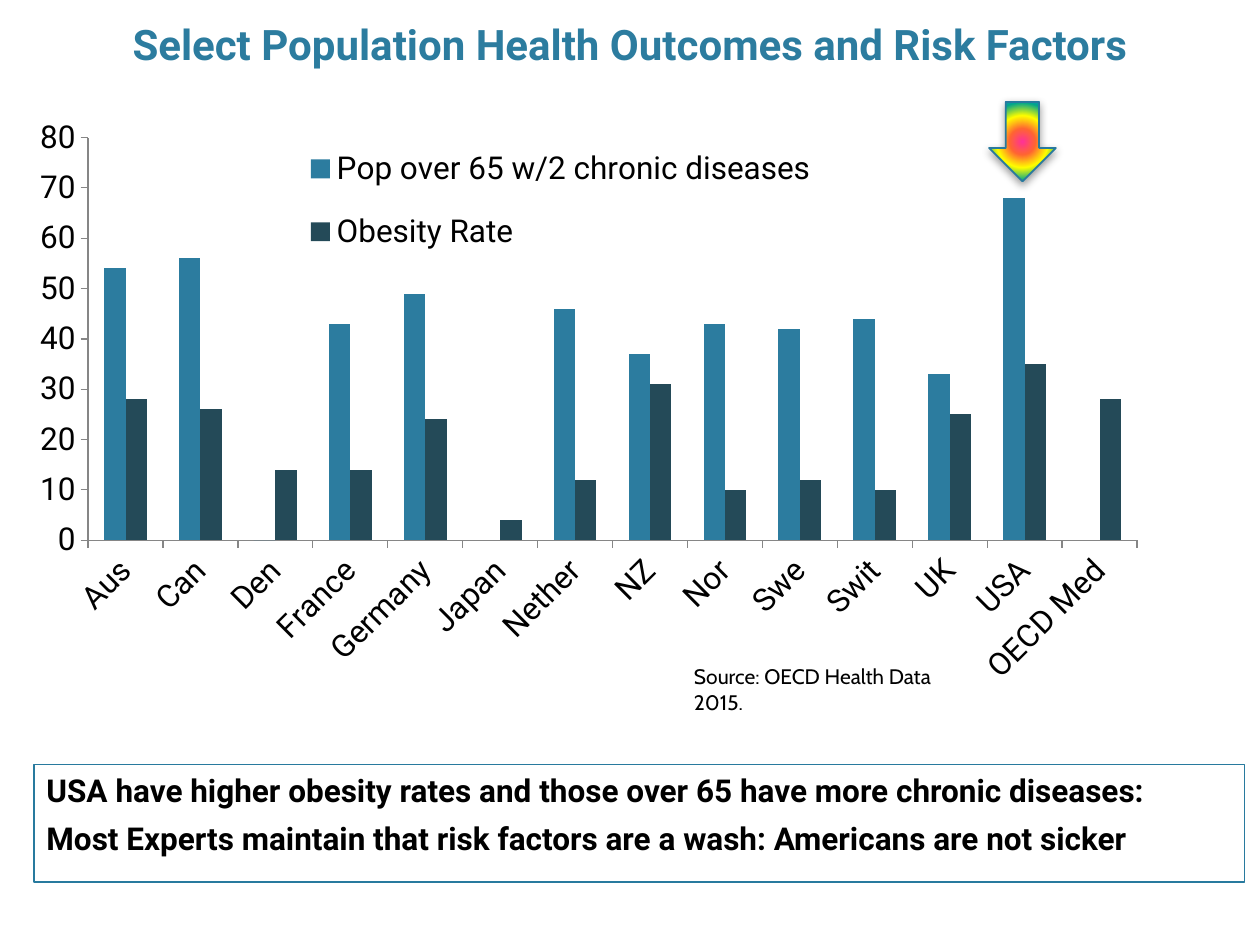
from lxml import etree
from pptx import Presentation
from pptx.chart.data import CategoryChartData
from pptx.dml.color import RGBColor
from pptx.enum.chart import XL_CHART_TYPE, XL_LEGEND_POSITION, XL_TICK_MARK
from pptx.enum.shapes import MSO_SHAPE
from pptx.enum.text import MSO_ANCHOR, MSO_AUTO_SIZE, PP_ALIGN
from pptx.oxml import parse_xml
from pptx.oxml.ns import nsdecls, qn
from pptx.util import Inches, Pt

BLUE = RGBColor(0x2C, 0x7C, 0x9F)
OUTLINE = RGBColor(0x28, 0x7A, 0x9E)
DARK_TEAL = RGBColor(0x24, 0x4A, 0x58)
AXIS_GRAY = RGBColor(0x86, 0x86, 0x86)
BLACK = RGBColor(0, 0, 0)
RAINBOW = [(0, "FF3399"), (25, "FF6633"), (50, "FFFF00"), (75, "01A78F"), (100, "3366FF")]

COUNTRIES = ["Aus", "Can", "Den", "France", "Germany", "Japan", "Nether", "NZ",
             "Nor", "Swe", "Swit", "UK", "USA", "OECD Med"]
OUTCOMES = [
    ("Pop over 65 w/2 chronic diseases", BLUE,
     [54, 56, 0, 43, 49, None, 46, 37, 43, 42, 44, 33, 68, None]),
    ("Obesity Rate", DARK_TEAL,
     [28, 26, 14, 14, 24, 4, 12, 31, 10, 12, 10, 25, 35, 28]),
]
FINDINGS = [
    "USA have higher obesity rates and those over 65 have more chronic diseases:",
    "Most Experts maintain that risk factors are a wash: Americans are not sicker",
]


def set_all(target, values):
    for name, value in values.items():
        setattr(target, name, value)


def style_font(font, size, color=BLACK, name="Roboto", bold=False):
    set_all(font, {"size": Pt(size), "name": name, "bold": bold})
    font.color.rgb = color


def place(shape, box):
    set_all(shape, dict(zip(("left", "top", "width", "height"), box)))


def add_title(slide, box):
    title = slide.shapes.title
    place(title, box)
    frame = title.text_frame
    frame.text = "Select Population Health Outcomes and Risk Factors"
    set_all(frame, {"vertical_anchor": MSO_ANCHOR.MIDDLE, "word_wrap": True,
                    "auto_size": MSO_AUTO_SIZE.NONE})
    heading = frame.paragraphs[0]
    heading.alignment = PP_ALIGN.CENTER
    style_font(heading.runs[0].font, 24, BLUE, bold=True)


def set_layout(parent, x, y, w, h, inner=False):
    """Give the plot area or legend a fixed place, as fractions of the chart."""
    for old in parent.findall(qn("c:layout")):
        parent.remove(old)
    target = '<c:layoutTarget val="inner"/>' if inner else ""
    modes = '<c:xMode val="edge"/><c:yMode val="edge"/>'
    sizes = "".join(f'<c:{key} val="{value}"/>' for key, value in zip("xywh", (x, y, w, h)))
    layout = parse_xml(f'<c:layout {nsdecls("c")}><c:manualLayout>{target}{modes}{sizes}'
                       '</c:manualLayout></c:layout>')
    position = parent.find(qn("c:legendPos"))
    parent.insert(0 if position is None else parent.index(position) + 1, layout)


def add_outcomes_chart(slide, box):
    data = CategoryChartData()
    data.categories = COUNTRIES
    for name, _, values in OUTCOMES:
        data.add_series(name, values)
    chart = slide.shapes.add_chart(XL_CHART_TYPE.COLUMN_CLUSTERED, *box, data).chart
    chart.has_title = False
    style_font(chart.font, 18)

    # Columns
    plot = chart.plots[0]
    set_all(plot, {"gap_width": 150, "overlap": 0, "vary_by_categories": False})
    for series, (_, color, _) in zip(plot.series, OUTCOMES):
        series.format.fill.solid()
        series.format.fill.fore_color.rgb = color

    # Axes
    for axis in (chart.category_axis, chart.value_axis):
        set_all(axis, {"has_major_gridlines": False, "major_tick_mark": XL_TICK_MARK.OUTSIDE,
                       "minor_tick_mark": XL_TICK_MARK.NONE})
        axis.format.line.color.rgb = AXIS_GRAY
        style_font(axis.tick_labels.font, 18)
    set_all(chart.value_axis, {"minimum_scale": 0, "maximum_scale": 80, "major_unit": 10})
    label_body = chart.category_axis._element.find(f'{qn("c:txPr")}/{qn("a:bodyPr")}')
    label_body.set("rot", "-2700000")

    # Legend over the plot
    chart.has_legend = True
    legend = chart.legend
    set_all(legend, {"position": XL_LEGEND_POSITION.RIGHT, "include_in_layout": False})
    style_font(legend.font, 18)
    set_layout(legend._element, 0.22, 0.03, 0.5, 0.23)
    set_layout(chart._chartSpace.chart.plotArea, 0.06, 0.05, 0.91, 0.61, inner=True)


def add_usa_arrow(slide, box):
    arrow = slide.shapes.add_shape(MSO_SHAPE.DOWN_ARROW, *box)
    arrow.line.color.rgb = OUTLINE
    arrow.line.width = Pt(1)
    stops = "".join(f'<a:gs pos="{pos * 1000}"><a:srgbClr val="{color}"/></a:gs>'
                    for pos, color in RAINBOW)
    gradient = parse_xml(
        f'<a:gradFill {nsdecls("a")} rotWithShape="1"><a:gsLst>{stops}</a:gsLst>'
        '<a:path path="circle"><a:fillToRect l="50000" t="50000" r="50000" b="50000"/>'
        '</a:path></a:gradFill>')
    properties = arrow._element.spPr
    properties.find(qn("a:prstGeom")).addnext(gradient)

    # Soft shadow below
    arrow.shadow.inherit = False
    shadow = etree.SubElement(properties.find(qn("a:effectLst")), qn("a:outerShdw"),
                              blurRad=str(Pt(5)), dist=str(Pt(2)), dir="5400000",
                              rotWithShape="0")
    color = etree.SubElement(shadow, qn("a:srgbClr"), val="000000")
    etree.SubElement(color, qn("a:alpha"), val="40000")


def add_source(slide, box):
    frame = slide.shapes.add_textbox(*box).text_frame
    frame.text = "Source: OECD Health Data 2015."
    set_all(frame, {"word_wrap": True, "auto_size": MSO_AUTO_SIZE.SHAPE_TO_FIT_TEXT})
    style_font(frame.paragraphs[0].runs[0].font, 12, name="Cabin")


def add_findings(slide, box):
    panel = slide.shapes.add_shape(MSO_SHAPE.RECTANGLE, *box)
    panel.shadow.inherit = False
    panel.fill.background()
    panel.line.color.rgb = OUTLINE
    panel.line.width = Pt(0.75)
    frame = panel.text_frame
    frame.text = "\n".join(FINDINGS)
    set_all(frame, {"word_wrap": False, "vertical_anchor": MSO_ANCHOR.TOP})
    for finding in frame.paragraphs:
        set_all(finding, {"alignment": PP_ALIGN.LEFT, "space_before": Pt(6)})
        style_font(finding.runs[0].font, 18, bold=True)


def inches(*lengths):
    return [Inches(length) for length in lengths]


def main():
    deck = Presentation()
    deck.slide_width, deck.slide_height = inches(10, 7.5)
    slide = deck.slides.add_slide(deck.slide_layouts.get_by_name("Title Only"))
    add_title(slide, inches(0, 0.1, 10, 0.5))
    add_source(slide, inches(5.41, 5.22, 2.44, 0.3))
    add_outcomes_chart(slide, inches(0.15, 0.83, 9.15, 5.24))
    add_usa_arrow(slide, inches(7.85, 0.81, 0.53, 0.63))
    add_findings(slide, inches(0.27, 6.07, 9.61, 0.93))
    deck.save("out.pptx")


if __name__ == "__main__":
    main()
